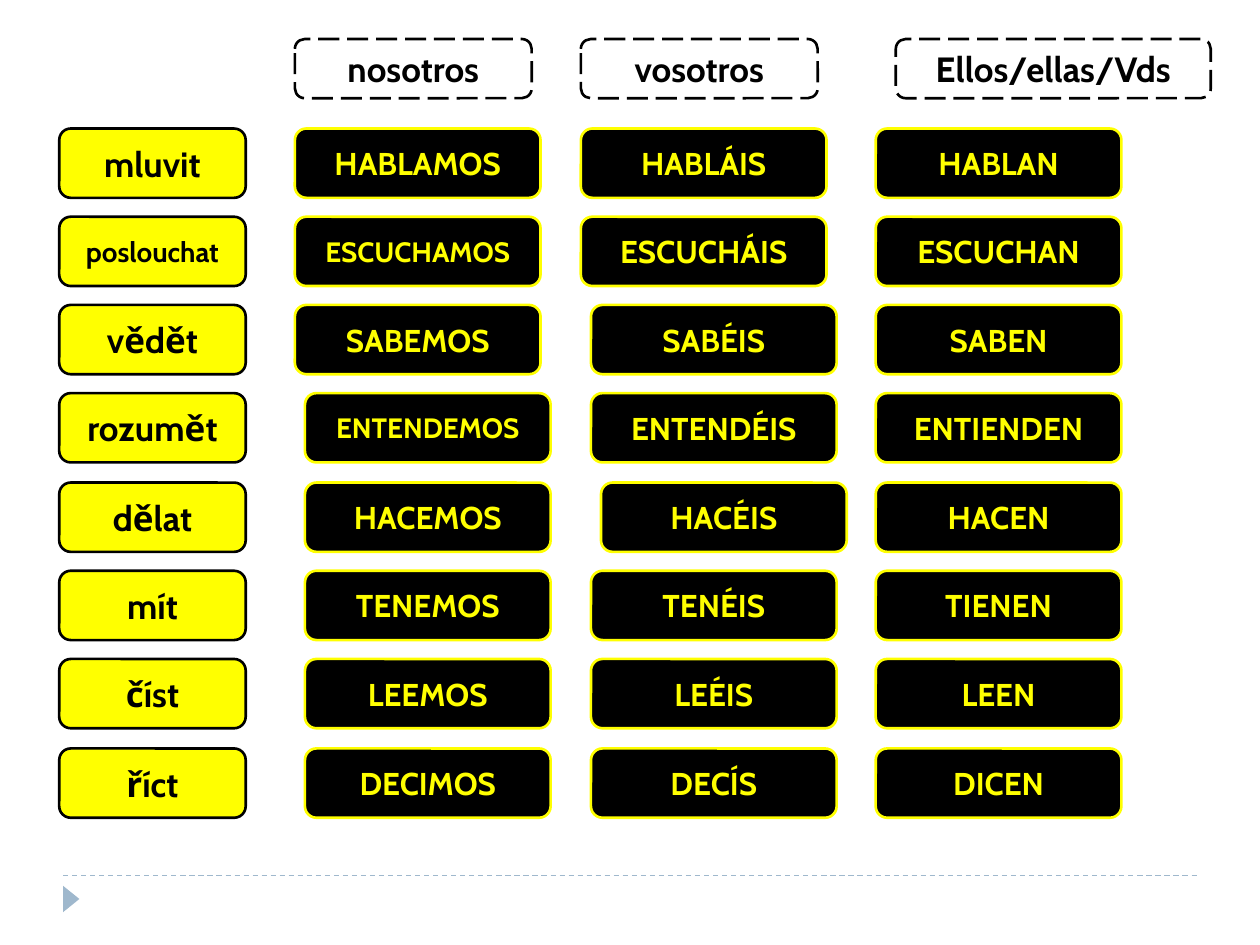
import dataclasses

import lxml.etree
import pptx
import pptx.dml.color
import pptx.enum.dml
import pptx.enum.shapes
import pptx.enum.text
import pptx.oxml.ns
import pptx.util

SCALE = 9144


@dataclasses.dataclass(frozen=True)
class Theme:
    font: str = "Cabin"
    black: str = "000000"
    white: str = "FFFFFF"
    yellow: str = "FFFF00"
    accent: str = "9FB8CD"
    heading_size: int = 20
    form_size: int = 18
    small_size: int = 16
    outline: float = 1.5
    rule: float = 0.75


THEME = Theme()
DASH = pptx.enum.dml.MSO_LINE
SHAPE = pptx.enum.shapes.MSO_SHAPE

HEADINGS = [("nosotros", 234, 188), ("vosotros", 461, 188), ("Ellos/ellas/Vds", 711, 250)]
VERBS = ["mluvit", "poslouchat", "vědět", "rozumět", "dělat", "mít", "číst", "říct"]
FORM_COLUMNS = [
    (234, ["HABLAMOS", "ESCUCHAMOS", "SABEMOS", "ENTENDEMOS",
           "HACEMOS", "TENEMOS", "LEEMOS", "DECIMOS"], [0, 0, 0, 8, 8, 8, 8, 8]),
    (461, ["HABLÁIS", "ESCUCHÁIS", "SABÉIS", "ENTENDÉIS",
           "HACÉIS", "TENÉIS", "LEÉIS", "DECÍS"], [0, 0, 8, 8, 16, 8, 8, 8]),
    (695, ["HABLAN", "ESCUCHAN", "SABEN", "ENTIENDEN",
           "HACEN", "TIENEN", "LEEN", "DICEN"], [0] * 8),
]
SMALL_WORDS = {"poslouchat", "ESCUCHAMOS", "ENTENDEMOS"}


def px(length):
    return pptx.util.Emu(length * SCALE)


def rgb(color):
    return pptx.dml.color.RGBColor.from_string(color)


def write_text(shape, text, *, size, color, bold=True):
    frame = shape.text_frame
    frame.word_wrap = True
    frame.vertical_anchor = pptx.enum.text.MSO_ANCHOR.MIDDLE
    para = frame.paragraphs[0]
    para.alignment = pptx.enum.text.PP_ALIGN.CENTER
    span = para.add_run()
    span.text = text
    span.font.name = THEME.font
    span.font.size = pptx.util.Pt(size)
    span.font.bold = bold
    span.font.color.rgb = rgb(color)


def style_line(line, color, width, dash=None):
    line.color.rgb = rgb(color)
    line.width = pptx.util.Pt(width)
    if dash is not None:
        line.dash_style = dash


def add_card(page, box, text, *, fill, ink, border, size, dash=None):
    card = page.shapes.add_shape(SHAPE.ROUNDED_RECTANGLE, *map(px, box))
    card.shadow.inherit = False
    card.fill.solid()
    card.fill.fore_color.rgb = rgb(fill)
    style_line(card.line, border, THEME.outline, dash)
    write_text(card, text, size=size, color=ink)


def add_footer(page, box):
    left, top, width, height = box
    rule = page.shapes.add_connector(
        pptx.enum.shapes.MSO_CONNECTOR.STRAIGHT,
        px(left), px(top), px(left + width), px(top))
    style_line(rule.line, THEME.accent, THEME.rule, DASH.DASH)
    properties = rule._element.spPr
    lxml.etree.SubElement(properties, pptx.oxml.ns.qn("a:effectLst"))
    marker = page.shapes.add_shape(
        SHAPE.ISOSCELES_TRIANGLE,
        px(left - 4), px(top + height - 13), px(21), px(13))
    marker.rotation = 90
    marker.shadow.inherit = False
    marker.fill.solid()
    marker.fill.fore_color.rgb = rgb(THEME.accent)
    marker.line.fill.background()


def add_headings(page, box):
    left, top, _, height = box
    for text, offset, width in HEADINGS:
        add_card(page, (left + offset, top, width, height), text,
                 fill=THEME.white, ink=THEME.black, border=THEME.black,
                 size=THEME.heading_size, dash=DASH.LONG_DASH)


def add_column(page, box, words, shifts, *, size, **colors):
    left, top, width, height = box
    card_height = 55
    last_row = len(words) - 1
    for row, (word, shift) in enumerate(zip(words, shifts)):
        card_top = top + (height - card_height) * row // last_row
        add_card(page, (left + shift, card_top, width, card_height), word,
                 size=THEME.small_size if word in SMALL_WORDS else size, **colors)


def add_verb_grid(page, box):
    left, top, _, height = box
    add_column(page, (left + 47, top, 148, height), VERBS, [0] * len(VERBS),
               size=THEME.heading_size, fill=THEME.yellow,
               ink=THEME.black, border=THEME.black)
    for offset, forms, shifts in FORM_COLUMNS:
        add_column(page, (left + offset, top, 195, height), forms, shifts,
                   size=THEME.form_size, fill=THEME.black,
                   ink=THEME.yellow, border=THEME.yellow)


def main():
    deck = pptx.Presentation()
    deck.slide_width, deck.slide_height = px(1000), px(750)
    page = deck.slides.add_slide(deck.slide_layouts[6])
    page.background.fill.solid()
    page.background.fill.fore_color.rgb = rgb(THEME.white)
    add_footer(page, (50, 695, 900, 25))
    add_headings(page, (0, 31, 1000, 47))
    add_verb_grid(page, (0, 102, 1000, 547))
    deck.save("out.pptx")


if __name__ == "__main__":
    main()
